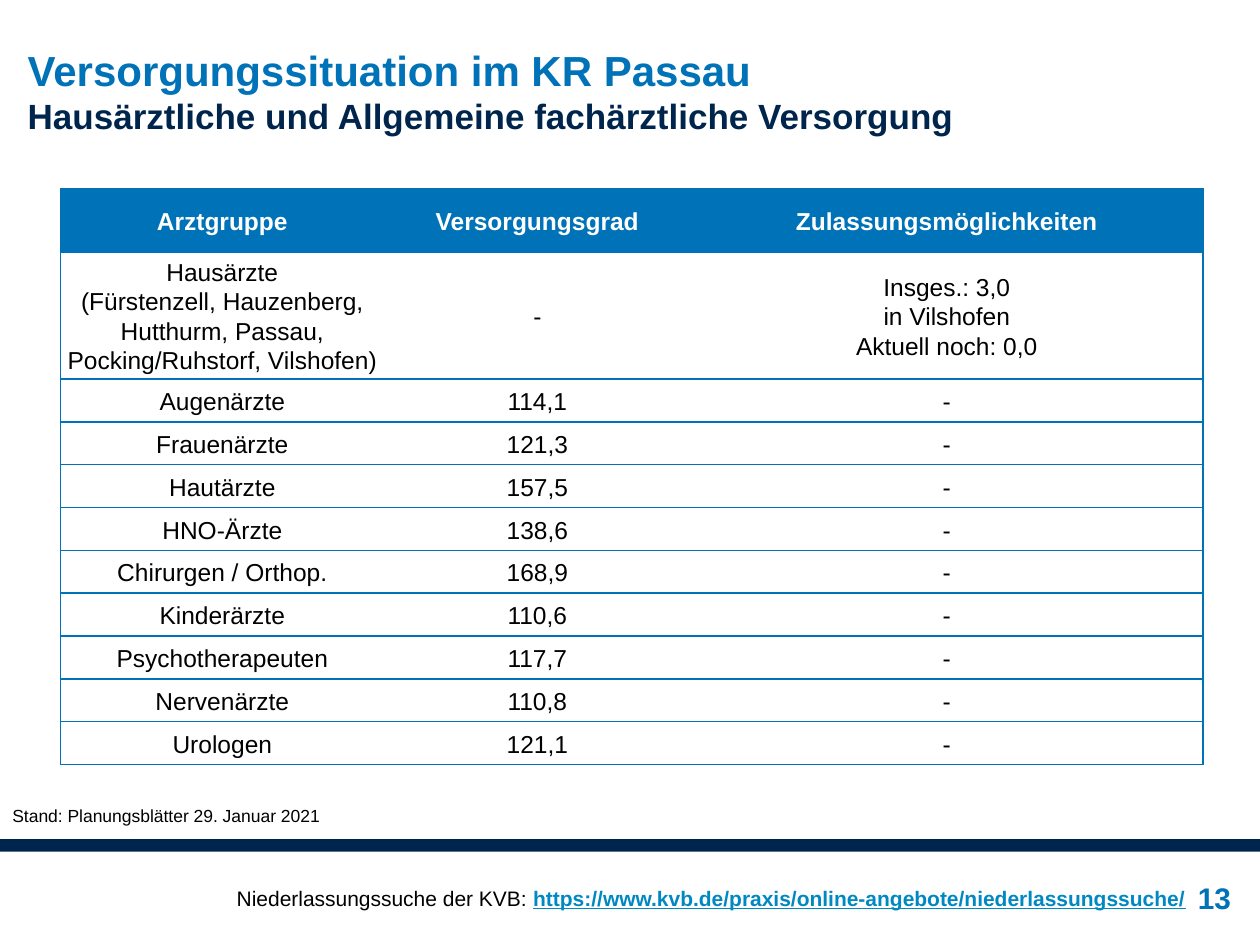
import pptx
import pptx.dml.color
import pptx.enum.shapes
import pptx.enum.text
import pptx.oxml
import pptx.oxml.ns
import pptx.util

Inches = pptx.util.Inches
ALIGN = pptx.enum.text.PP_ALIGN
ANCHOR = pptx.enum.text.MSO_ANCHOR

COLORS = {
    "blue": "0072B7",
    "navy": "00254D",
    "link": "0088C3",
    "black": "000000",
    "white": "FFFFFF",
}

DOCTOR_GROUPS = [
    ("Arztgruppe", "Versorgungsgrad", "Zulassungsmöglichkeiten"),
    (
        "Hausärzte\n(Fürstenzell, Hauzenberg, Hutthurm, Passau, Pocking/Ruhstorf, Vilshofen)",
        "-",
        "Insges.: 3,0\nin Vilshofen\nAktuell noch: 0,0",
    ),
    ("Augenärzte", "114,1", "-"),
    ("Frauenärzte", "121,3", "-"),
    ("Hautärzte", "157,5", "-"),
    ("HNO-Ärzte", "138,6", "-"),
    ("Chirurgen / Orthop.", "168,9", "-"),
    ("Kinderärzte", "110,6", "-"),
    ("Psychotherapeuten", "117,7", "-"),
    ("Nervenärzte", "110,8", "-"),
    ("Urologen", "121,1", "-"),
]


def rgb(name):
    return pptx.dml.color.RGBColor.from_string(COLORS[name])


def add_text(paragraph, text, size=14, color="black", bold=False, underline=False,
             align=None, line_spacing=None):
    """Append one formatted run to a paragraph."""
    if align is not None:
        paragraph.alignment = align
    if line_spacing is not None:
        paragraph.line_spacing = line_spacing
    run = paragraph.add_run()
    run.text = text
    run.font.name = SlideBuilder.font
    run.font.size = pptx.util.Pt(size)
    run.font.bold = bold
    run.font.underline = underline
    run.font.color.rgb = rgb(color)


class SlideBuilder:
    font = "Arial"
    cell_margins = (0.01, 0.01, 0.01, 0)
    border_width = pptx.util.Pt(1)

    def __init__(self, slide):
        self.slide = slide

    def bar(self, left, top, width, height, color):
        shape = self.slide.shapes.add_shape(
            pptx.enum.shapes.MSO_SHAPE.RECTANGLE,
            Inches(left), Inches(top), Inches(width), Inches(height))
        shape.shadow.inherit = False
        shape.fill.solid()
        shape.fill.fore_color.rgb = rgb(color)
        shape.line.fill.background()

    def text_box(self, left, top, width, height, margins=(0.1, 0.05, 0.1, 0.05),
                 anchor=ANCHOR.TOP):
        """Add an empty text box and return its first paragraph."""
        shape = self.slide.shapes.add_textbox(
            Inches(left), Inches(top), Inches(width), Inches(height))
        frame = shape.text_frame
        frame.word_wrap = True
        frame.vertical_anchor = anchor
        (frame.margin_left, frame.margin_top,
         frame.margin_right, frame.margin_bottom) = map(Inches, margins)
        return frame.paragraphs[0]

    def cell_borders(self, cell, visible):
        properties = cell._tc.get_or_add_tcPr()
        for index, side in enumerate("LRTB"):
            paint = (f'<a:solidFill><a:srgbClr val="{COLORS["blue"]}"/></a:solidFill>'
                     if side in visible else "<a:noFill/>")
            border = pptx.oxml.parse_xml(
                f'<a:ln{side} {pptx.oxml.ns.nsdecls("a")} w="{self.border_width}">'
                f"{paint}</a:ln{side}>")
            properties.insert(index, border)

    def table(self, left, top, column_widths, row_heights, rows):
        table = self.slide.shapes.add_table(
            len(rows), len(column_widths), Inches(left), Inches(top),
            Inches(sum(column_widths)), Inches(sum(row_heights))).table
        for column, width in zip(table.columns, column_widths):
            column.width = Inches(width)
        for row, height in zip(table.rows, row_heights):
            row.height = Inches(height)
        outer_sides = {0: "L", len(column_widths) - 1: "R"}
        for row_index, values in enumerate(rows):
            header = row_index == 0
            for column_index, value in enumerate(values):
                cell = table.cell(row_index, column_index)
                cell.fill.solid()
                cell.fill.fore_color.rgb = rgb("blue" if header else "white")
                cell.vertical_anchor = ANCHOR.MIDDLE
                (cell.margin_left, cell.margin_top,
                 cell.margin_right, cell.margin_bottom) = map(Inches, self.cell_margins)
                self.cell_borders(cell, "TB" + outer_sides.get(column_index, ""))
                for line_index, line in enumerate(value.split("\n")):
                    frame = cell.text_frame
                    paragraph = frame.add_paragraph() if line_index else frame.paragraphs[0]
                    add_text(paragraph, line, color="white" if header else "black",
                             bold=header, align=ALIGN.CENTER, line_spacing=1.07)


def main():
    presentation = pptx.Presentation()
    presentation.slide_width = Inches(10)
    presentation.slide_height = Inches(7.5)
    builder = SlideBuilder(presentation.slides.add_slide(presentation.slide_layouts[6]))

    # Footer bar and page number
    builder.bar(0, 6.66, 10, 0.1, "navy")
    page_number = builder.text_box(9.25, 6.75, 0.52, 0.75, margins=(0.03, 0, 0, 0),
                                   anchor=ANCHOR.MIDDLE)
    add_text(page_number, "13", size=17, color="blue", bold=True, align=ALIGN.RIGHT)

    # Title and subtitle
    title = builder.text_box(0.22, 0.35, 8.4, 0.5, margins=(0, 0, 0, 0))
    add_text(title, "Versorgungssituation im KR Passau", size=24, color="blue", bold=True)
    title.add_line_break()
    add_text(title, "Hausärztliche und Allgemeine fachärztliche Versorgung",
             size=20, color="navy", bold=True)

    # Supply by doctor group
    row_heights = [0.5, 0.95] + [0.34] * (len(DOCTOR_GROUPS) - 2)
    builder.table(0.48, 1.5, [2.57, 2.43, 4.07], row_heights, DOCTOR_GROUPS)

    # Date of data and search address
    date_note = builder.text_box(0, 6.34, 3.4, 0.27)
    add_text(date_note, "Stand: Planungsblätter 29. Januar 2021", size=10)
    search_note = builder.text_box(1.78, 6.98, 8.91, 0.61)
    add_text(search_note, "Niederlassungssuche der KVB: ", size=12)
    add_text(search_note, "https://www.kvb.de/praxis/online-angebote/niederlassungssuche/",
             size=12, color="link", bold=True, underline=True)

    presentation.save("out.pptx")


if __name__ == "__main__":
    main()
